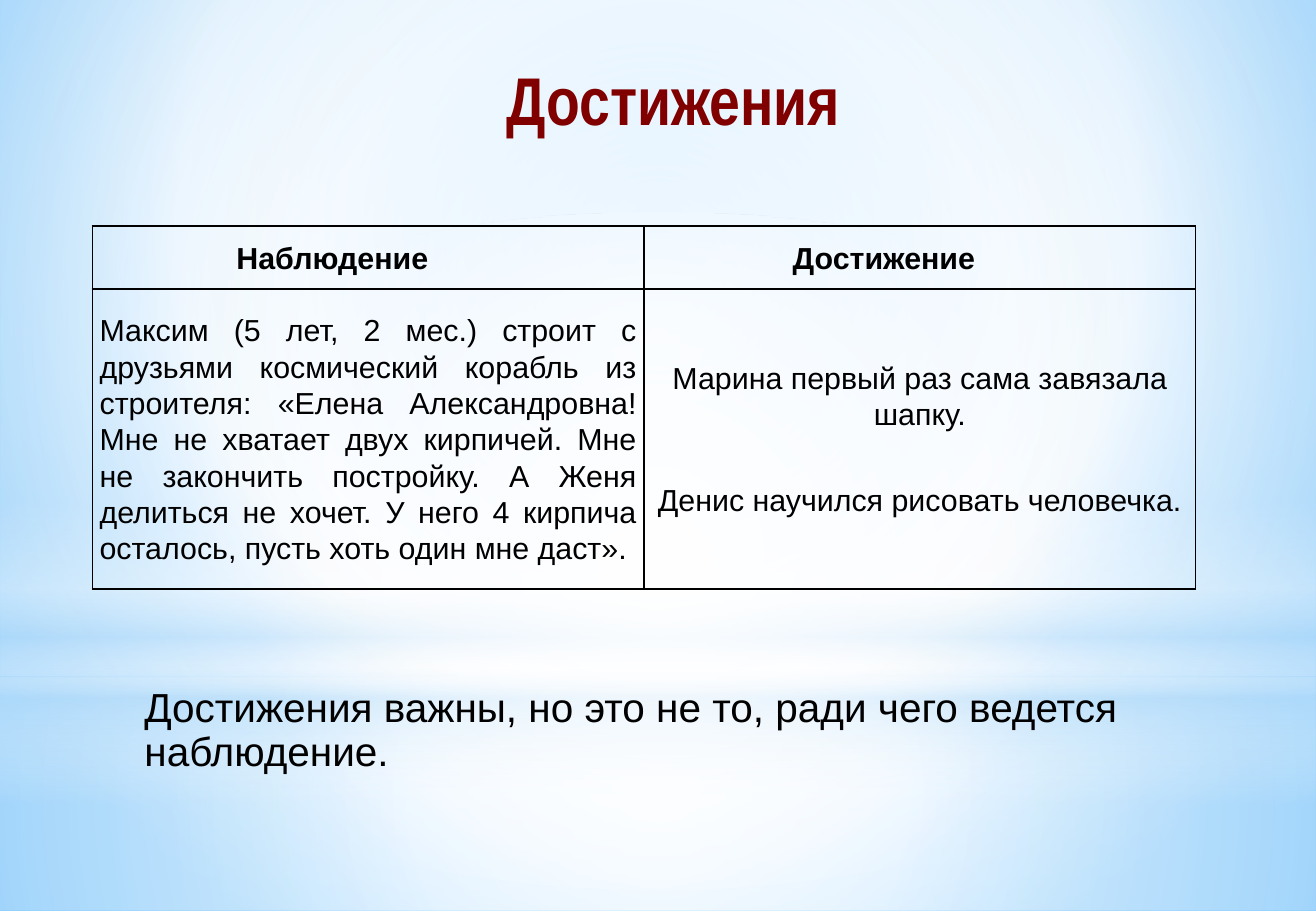
from dataclasses import dataclass

from lxml.etree import SubElement
from pptx import Presentation
from pptx.dml.color import RGBColor
from pptx.enum.shapes import MSO_SHAPE
from pptx.enum.text import MSO_ANCHOR, MSO_AUTO_SIZE, PP_ALIGN
from pptx.oxml.ns import qn
from pptx.util import Inches, Pt


@dataclass(frozen=True)
class Theme:
    """Colours, fonts and type sizes of the slide."""
    ink: str = "000000"
    heading: str = "800000"
    white: str = "FFFFFF"
    haze: str = "B4DCFA"
    sky: str = "9ED5FF"
    deep_sky: str = "5BB9FF"
    font: str = "Arial"
    heading_font: str = "Arial Narrow"
    heading_size: int = 40
    closing_size: int = 24
    table_size: int = 18


THEME = Theme()
CENTRE = (50, 50, 50, 50)
TABLE_ROWS = [
    [["Наблюдение"], ["Достижение"]],
    [["Максим (5 лет, 2 мес.) строит с друзьями космический корабль из строителя: "
      "«Елена Александровна! Мне не хватает двух кирпичей. Мне не закончить постройку. "
      "А Женя делиться не хочет. У него 4 кирпича осталось, пусть хоть один мне даст»."],
     ["Марина первый раз сама завязала шапку.", "Денис научился рисовать человечка."]],
]


def set_all(target, **values):
    """Set each named attribute on the target."""
    for name, value in values.items():
        setattr(target, name, value)


def add_solid(parent, colour, alpha=100):
    """Append a colour element with its opacity."""
    tint = SubElement(parent, qn("a:srgbClr"), val=colour)
    if alpha < 100:
        SubElement(tint, qn("a:alpha"), val=str(alpha * 1000))


def paint_gradient(fill, owner, stops, focus=None):
    """Fill with a circular gradient around focus, or a vertical one without it."""
    fill.gradient()
    gradient = owner.find(".//" + qn("a:gradFill"))
    for part in list(gradient):
        gradient.remove(part)
    gradient.set("rotWithShape", "1")
    stop_list = SubElement(gradient, qn("a:gsLst"))
    for position, colour, alpha in stops:
        stop = SubElement(stop_list, qn("a:gs"), pos=str(position * 1000))
        add_solid(stop, colour, alpha)
    if focus:
        circle = SubElement(gradient, qn("a:path"), path="circle")
        edges = {side: str(share * 1000) for side, share in zip("ltrb", focus)}
        SubElement(circle, qn("a:fillToRect"), **edges)
    else:
        SubElement(gradient, qn("a:lin"), ang="5400000", scaled="0")


def add_glow(slide, outline, top, height, stops, focus=None):
    """Add a borderless gradient layer across the slide."""
    glow = slide.shapes.add_shape(outline, 0, Inches(top), Inches(10.83), Inches(height))
    glow.shadow.inherit = False
    glow.line.fill.background()
    paint_gradient(glow.fill, glow.element.spPr, stops, focus)


def write(paragraph, text, colour, font, layout):
    """Write one formatted run into a paragraph and return it."""
    set_all(paragraph, **layout)
    run = paragraph.add_run()
    run.text = text
    set_all(run.font, **font)
    run.font.color.rgb = RGBColor.from_string(colour)
    return run


def add_backdrop(slide):
    """Paint the background and its soft light layers."""
    white, haze = THEME.white, THEME.haze
    paint_gradient(slide.background.fill, slide.element,
                   [(0, THEME.sky, 100), (60, white, 100), (100, THEME.deep_sky, 100)],
                   (20, 10, 20, 60))
    add_glow(slide, MSO_SHAPE.RECTANGLE, 5.58, 1.92,
             [(0, white, 91), (37, white, 76), (100, haze, 79)], CENTRE)
    add_glow(slide, MSO_SHAPE.RECTANGLE, 0, 5.58,
             [(0, white, 89), (48, white, 62), (100, haze, 79)], CENTRE)
    add_glow(slide, MSO_SHAPE.RECTANGLE, 4.12, 2.5,
             [(0, white, 0), (29, white, 30), (45, haze, 40),
              (55, white, 26), (65, haze, 60), (100, white, 0)])
    add_glow(slide, MSO_SHAPE.OVAL, 1.75, 5.58, [(0, white, 100), (56, white, 0)], CENTRE)


def add_borders(cell):
    """Draw a thin line on all four sides of a cell."""
    properties = cell._tc.get_or_add_tcPr()
    for index, side in enumerate(("lnL", "lnR", "lnT", "lnB")):
        border = SubElement(properties, qn("a:" + side), w=str(Pt(1)))
        add_solid(SubElement(border, qn("a:solidFill")), THEME.ink)
        properties.insert(index, border)


def fill_cell(cell, lines, is_header, align):
    """Format a table cell and write its paragraphs."""
    set_all(cell, vertical_anchor=MSO_ANCHOR.MIDDLE, margin_left=Inches(0.06),
            margin_right=Inches(0.65 if is_header else 0.06), margin_top=0, margin_bottom=0)
    cell.fill.background()
    add_borders(cell)
    font = {"name": THEME.font, "size": Pt(THEME.table_size), "bold": is_header}
    for index, line in enumerate(lines):
        paragraph = cell.text_frame.add_paragraph() if index else cell.text_frame.paragraphs[0]
        layout = {"alignment": align, "line_spacing": 1.07,
                  "space_before": Pt(27.5 if index else 2), "space_after": Pt(2)}
        write(paragraph, line, THEME.ink, font, layout)


def add_observation_table(slide):
    """Add the table of observations and achievements."""
    table = slide.shapes.add_table(2, 2, Inches(0.76), Inches(1.86),
                                   Inches(9.08), Inches(2.99)).table
    set_all(table, first_row=False, horz_banding=False)
    for row, height in zip(table.rows, (0.52, 2.47)):
        row.height = Inches(height)
    for row_index, row in enumerate(TABLE_ROWS):
        for column_index, lines in enumerate(row):
            is_story = (row_index, column_index) == (1, 0)
            align = PP_ALIGN.JUSTIFY if is_story else PP_ALIGN.CENTER
            fill_cell(table.cell(row_index, column_index), lines, row_index == 0, align)


def add_closing(slide, text):
    """Add the closing remark under the table."""
    closing = slide.shapes.add_textbox(Inches(1.09), Inches(5.61), Inches(8.76), Inches(0.83))
    set_all(closing.text_frame, word_wrap=True, auto_size=MSO_AUTO_SIZE.SHAPE_TO_FIT_TEXT)
    write(closing.text_frame.paragraphs[0], text, THEME.ink,
          {"name": THEME.font, "size": Pt(THEME.closing_size)},
          {"line_spacing": 0.9, "space_before": Pt(10)})


def set_heading(slide, text):
    """Place the title in front and give it an outlined bold face."""
    heading = slide.shapes.title
    set_all(heading, left=Inches(1.68), top=Inches(0.43), width=Inches(7.72), height=Inches(1.25))
    set_all(heading.text_frame, word_wrap=True, auto_size=MSO_AUTO_SIZE.NONE,
            vertical_anchor=MSO_ANCHOR.TOP)
    run = write(heading.text_frame.paragraphs[0], text, THEME.heading,
                {"name": THEME.heading_font, "size": Pt(THEME.heading_size), "bold": True},
                {"alignment": PP_ALIGN.CENTER})
    properties = run.font._element
    outline = SubElement(properties, qn("a:ln"), w=str(Pt(1)))
    add_solid(SubElement(outline, qn("a:solidFill")), THEME.heading)
    properties.insert(0, outline)
    heading.element.getparent().append(heading.element)


def main():
    """Build the achievements slide and save it."""
    deck = Presentation()
    set_all(deck, slide_width=Inches(10.83), slide_height=Inches(7.5))
    slide = deck.slides.add_slide(deck.slide_layouts[5])
    add_backdrop(slide)
    add_observation_table(slide)
    add_closing(slide, "Достижения важны, но это не то, ради чего ведется наблюдение.")
    set_heading(slide, "Достижения")
    deck.save("out.pptx")


if __name__ == "__main__":
    main()
